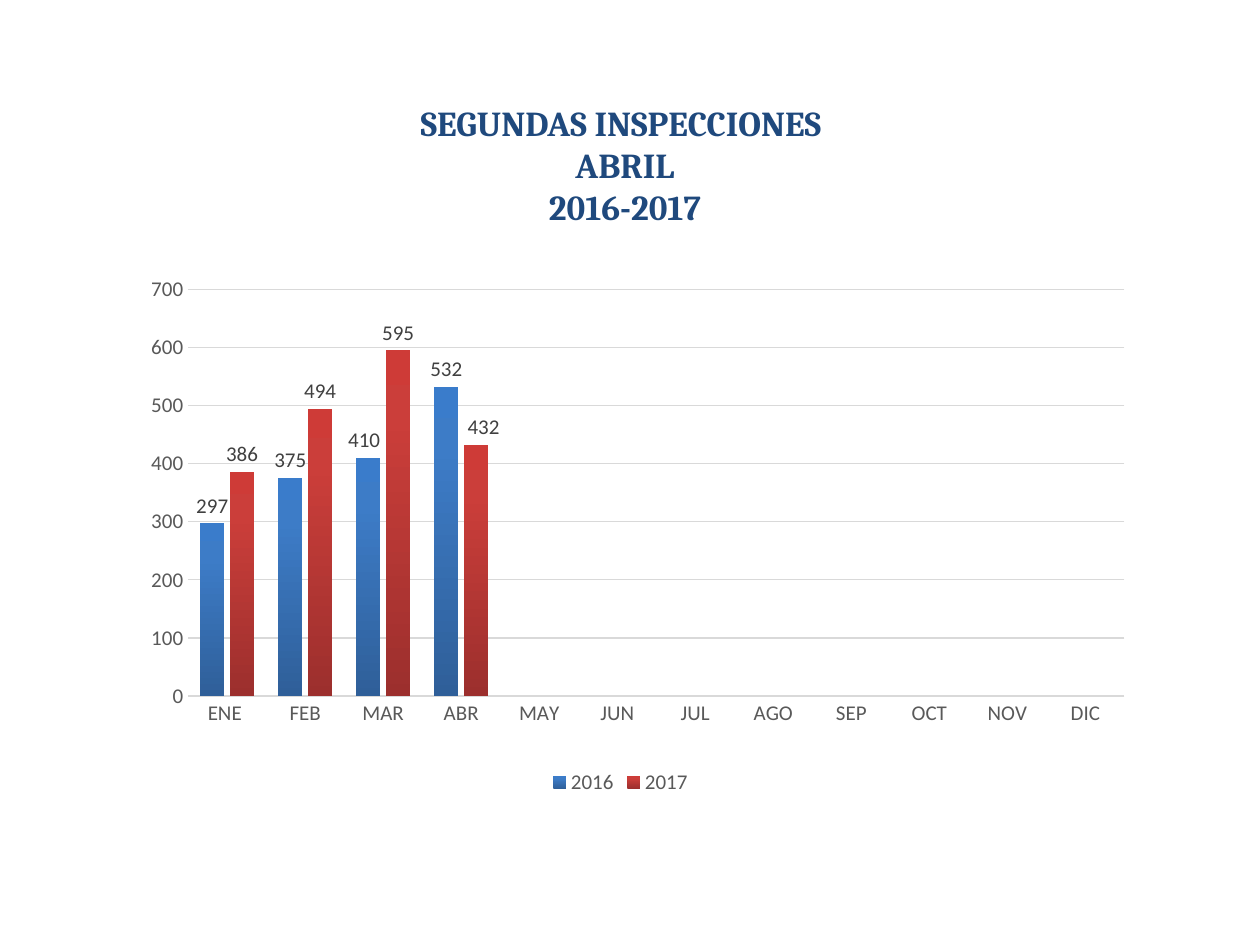
from dataclasses import dataclass

from lxml import etree
from pptx import Presentation
from pptx.chart.data import CategoryChartData
from pptx.dml.color import RGBColor
from pptx.enum import chart as ch, text as tx
from pptx.oxml import ns, parse_xml
from pptx.util import Pt


@dataclass(frozen=True)
class Theme:
    head: str = "1F497D"
    axis: str = "595959"
    label: str = "404040"
    grid: str = "D9D9D9"
    serif: str = "Cambria"
    sans: str = "Calibri"
    big: int = 20
    small: int = 12


THEME = Theme()
TITLE = ["SEGUNDAS INSPECCIONES ", "ABRIL", "2016-2017"]
MONTHS = ["ENE ", "FEB", "MAR", "ABR", "MAY", "JUN",
          "JUL", "AGO", "SEP", "OCT", "NOV", "DIC"]
# name, values, gradient stops (percent, colour), moved label (point, shift)
YEARS = [
    ("2016", [297, 375, 410, 532],
     [(0, "2F5F99"), (80, "3D7CC7"), (100, "3A7CCB")], (2, -0.004)),
    ("2017", [386, 494, 595, 432],
     [(0, "9C2F2D"), (80, "CB3E3A"), (100, "CE3B37")], (3, 0.007)),
]


def put(obj, **vals):
    for name, val in vals.items():
        setattr(obj, name, val)


def style(font, size, color, name, bold=False):
    put(font, size=Pt(size), name=name, bold=bold)
    font.color.rgb = RGBColor.from_string(color)


def stroke(line, width):
    line.width = Pt(width)
    line.color.rgb = RGBColor.from_string(THEME.grid)


def layout(**vals):
    """Make a manual chart layout from its parts, in schema order."""
    root = etree.Element(ns.qn("c:layout"))
    box = etree.SubElement(root, ns.qn("c:manualLayout"))
    for tag, val in vals.items():
        etree.SubElement(box, ns.qn(f"c:{tag}"), val=str(val))
    return root


def shade(fmt, stops):
    """Fill with a gradient that rises from the foot of the column."""
    fmt.fill.solid()
    marks = "".join(
        f'<a:gs pos="{pos * 1000}"><a:srgbClr val="{color}"/></a:gs>'
        for pos, color in stops)
    grad = parse_xml(
        f'<a:gradFill {ns.nsdecls("a")} rotWithShape="1"><a:gsLst>{marks}'
        '</a:gsLst><a:lin ang="16200000" scaled="0"/></a:gradFill>')
    old = fmt._element if hasattr(fmt, "_element") else None
    return grad, old


def fill(series, stops):
    grad, _ = shade(series.format, stops)
    flat = series._element.find(ns.qn("c:spPr")).find(ns.qn("a:solidFill"))
    flat.getparent().replace(flat, grad)


def label(series, point, shift):
    """Label all columns, with one label moved sideways."""
    tags = series.data_labels
    put(tags, show_value=True, position=ch.XL_LABEL_POSITION.OUTSIDE_END)
    style(tags.font, THEME.small, THEME.label, THEME.sans)
    tag = series.points[point].data_label
    style(tag.font, THEME.small, THEME.label, THEME.sans)
    tag.position = ch.XL_LABEL_POSITION.OUTSIDE_END
    node = series._element.find(".//" + ns.qn("c:dLbl"))
    node.find(ns.qn("c:idx")).addnext(layout(x=shift, y=0))


def title(slide, box):
    frame = slide.shapes.add_textbox(*map(Pt, box)).text_frame
    put(frame, word_wrap=True, auto_size=tx.MSO_AUTO_SIZE.SHAPE_TO_FIT_TEXT)
    for i, words in enumerate(TITLE):
        para = frame.add_paragraph() if i else frame.paragraphs[0]
        para.alignment = tx.PP_ALIGN.CENTER
        run = para.add_run()
        run.text = words
        style(run.font, THEME.big, THEME.head, THEME.serif, True)


def axes(chart):
    cat, val = chart.category_axis, chart.value_axis
    for axis in (cat, val):
        put(axis, major_tick_mark=ch.XL_TICK_MARK.NONE,
            minor_tick_mark=ch.XL_TICK_MARK.NONE)
        style(axis.tick_labels.font, THEME.small, THEME.axis, THEME.sans)
    stroke(cat.format.line, 1)
    put(val, minimum_scale=0, maximum_scale=700, major_unit=100,
        has_major_gridlines=True)
    val.format.line.fill.background()
    stroke(val.major_gridlines.format.line, 0.75)


def columns(slide, box):
    data = CategoryChartData()
    data.categories = MONTHS
    for name, vals, *_ in YEARS:
        data.add_series(name, vals + [None] * (len(MONTHS) - len(vals)))
    chart = slide.shapes.add_chart(
        ch.XL_CHART_TYPE.COLUMN_CLUSTERED, *map(Pt, box), data).chart
    put(chart, has_title=False, has_legend=True)
    style(chart.font, 10, "000000", THEME.sans)
    put(chart.legend, position=ch.XL_LEGEND_POSITION.BOTTOM,
        include_in_layout=False)
    style(chart.legend.font, THEME.small, THEME.axis, THEME.sans)
    axes(chart)
    plot = chart.plots[0]
    put(plot, gap_width=100, overlap=-24, vary_by_categories=False)
    for series, (_, _, stops, moved) in zip(plot.series, YEARS):
        fill(series, stops)
        label(series, *moved)
    area = chart._chartSpace.find(".//" + ns.qn("c:plotArea"))
    for old in area.findall(ns.qn("c:layout")):
        area.remove(old)
    area.insert(0, layout(layoutTarget="inner", xMode="edge", yMode="edge",
                          x=0.089, y=0.046, w=0.89, h=0.76))


def main():
    deck = Presentation()
    put(deck, slide_width=Pt(720), slide_height=Pt(540))
    slide = deck.slides.add_slide(deck.slide_layouts[6])
    title(slide, (93.6, 54.7, 527, 79.9))
    columns(slide, (54, 151.2, 601.2, 306))
    deck.save("out.pptx")


if __name__ == "__main__":
    main()
